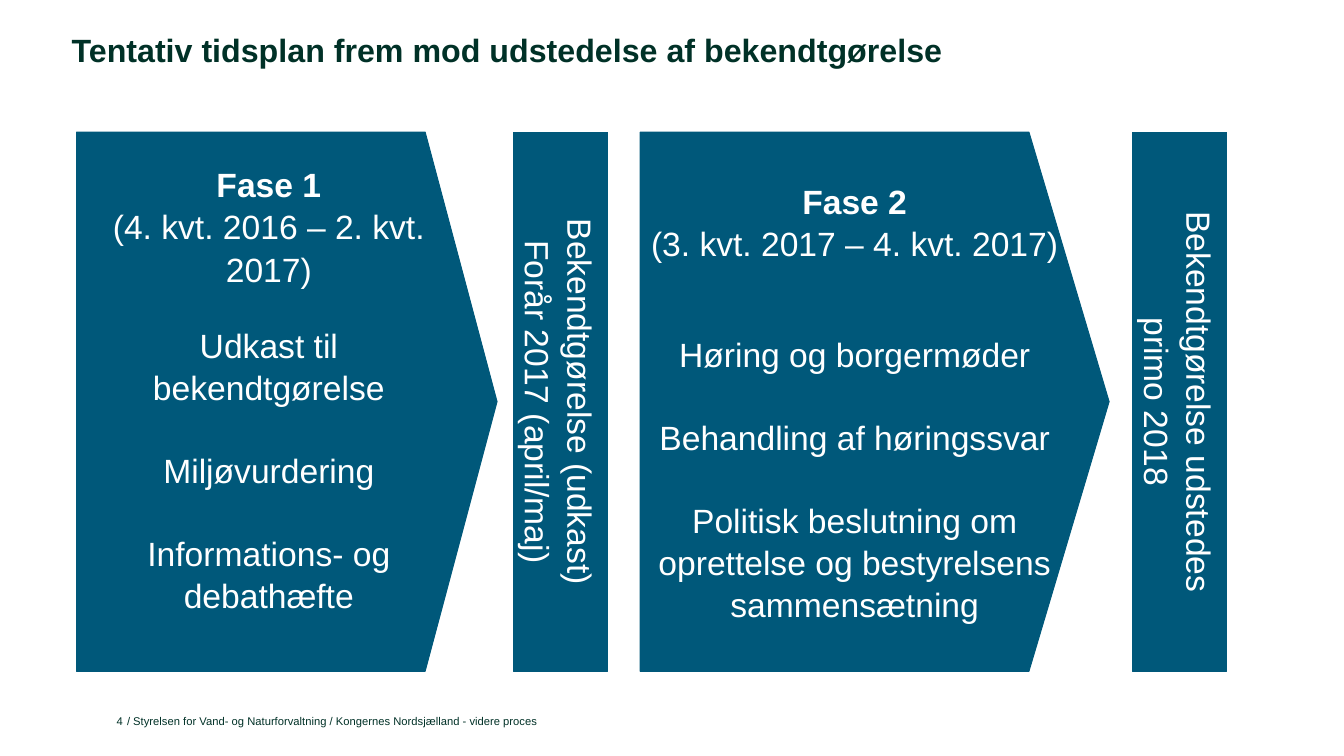
from pptx import Presentation
from pptx.dml.color import RGBColor
from pptx.enum.shapes import MSO_SHAPE as Preset
from pptx.enum.text import MSO_ANCHOR as Anchor, PP_ALIGN as Align
from pptx.util import Inches, Pt

BLUE = RGBColor(0x00, 0x58, 0x7A)
GREEN = RGBColor(0x00, 0x31, 0x27)
WHITE = RGBColor(0xFF, 0xFF, 0xFF)
BAND_TOP, BAND_HEIGHT = 1.31, 5.35
INSET = 0.08

prs = Presentation()
prs.slide_width, prs.slide_height = Inches(13.33), Inches(7.5)
slide = prs.slides.add_slide(prs.slide_layouts[6])


def set_insets(frame, inset):
    for side in ("left", "top", "right", "bottom"):
        setattr(frame, f"margin_{side}", Inches(inset))


def add_step(preset, left, width, lines):
    """Add a blue step; lines holds (text, bold, points of space before)."""
    step = slide.shapes.add_shape(
        preset, Inches(left), Inches(BAND_TOP), Inches(width), Inches(BAND_HEIGHT))
    step.shadow.inherit = False
    step.fill.solid()
    step.fill.fore_color.rgb = BLUE
    step.line.color.rgb = BLUE
    step.line.width = Pt(0.75)
    frame = step.text_frame
    frame.word_wrap = True
    frame.vertical_anchor = Anchor.MIDDLE
    set_insets(frame, INSET)
    for index, (text, bold, gap) in enumerate(lines):
        line = frame.paragraphs[0] if index == 0 else frame.add_paragraph()
        line.text = text
        line.alignment = Align.CENTER
        line.line_spacing = 1.05
        line.space_before = Pt(gap)
        font_format = {"name": "Arial", "size": Pt(24), "bold": bold}
        for key, value in font_format.items():
            setattr(line.font, key, value)
        line.font.color.rgb = WHITE
    return step


# Title and footer
labels = [
    ("Tentativ tidsplan frem mod udstedelse af bekendtgørelse",
     (0.71, 0.34, 11.91, 0.51), 23, True, Align.LEFT, Anchor.TOP, 0.9),
    ("/ Styrelsen for Vand- og Naturforvaltning / Kongernes Nordsjælland - videre proces",
     (1.26, 7, 6.18, 0.22), 8, False, Align.LEFT, Anchor.BOTTOM, 1.0),
    ("4", (0.89, 7, 0.33, 0.22), 8, False, Align.RIGHT, Anchor.BOTTOM, 1.0),
]
for text, place, size, bold, align, anchor, spacing in labels:
    frame = slide.shapes.add_textbox(*map(Inches, place)).text_frame
    frame.word_wrap = True
    frame.vertical_anchor = anchor
    set_insets(frame, 0)
    label = frame.paragraphs[0]
    label.text = text
    label.alignment = align
    label.line_spacing = spacing
    font_format = {"name": "Arial", "size": Pt(size), "bold": bold}
    for key, value in font_format.items():
        setattr(label.font, key, value)
    label.font.color.rgb = GREEN

# Phases: left, width, bottom inset, lines
phases = [
    (0.76, 4.17, 0.34, [
        ("Fase 1", True, 0),
        ("(4. kvt. 2016 – 2. kvt. 2017)", False, 0),
        ("Udkast til bekendtgørelse", False, 24),
        ("Miljøvurdering", False, 29),
        ("Informations- og debathæfte", False, 29),
    ]),
    (6.35, 4.65, INSET, [
        ("Fase 2", True, 0),
        ("(3. kvt. 2017 – 4. kvt. 2017)", False, 0),
        ("Høring og borgermøder", False, 49),
        ("Behandling af høringssvar", False, 29),
        ("Politisk beslutning om oprettelse og bestyrelsens sammensætning", False, 29),
    ]),
]
for left, width, bottom, lines in phases:
    phase = add_step(Preset.PENTAGON, left, width, lines)
    phase.adjustments[0] = 0.171
    phase.text_frame.margin_bottom = Inches(bottom)

# Milestones with text turned a quarter clockwise
milestones = [
    (5.09, ["Bekendtgørelse (udkast)", "Forår 2017 (april/maj)"]),
    (11.23, ["Bekendtgørelse udstedes", "primo 2018"]),
]
for left, lines in milestones:
    milestone = add_step(Preset.RECTANGLE, left, 0.94,
                         [(text, False, 0) for text in lines])
    milestone.text_frame._txBody.bodyPr.set("vert", "vert")

prs.save("out.pptx")
